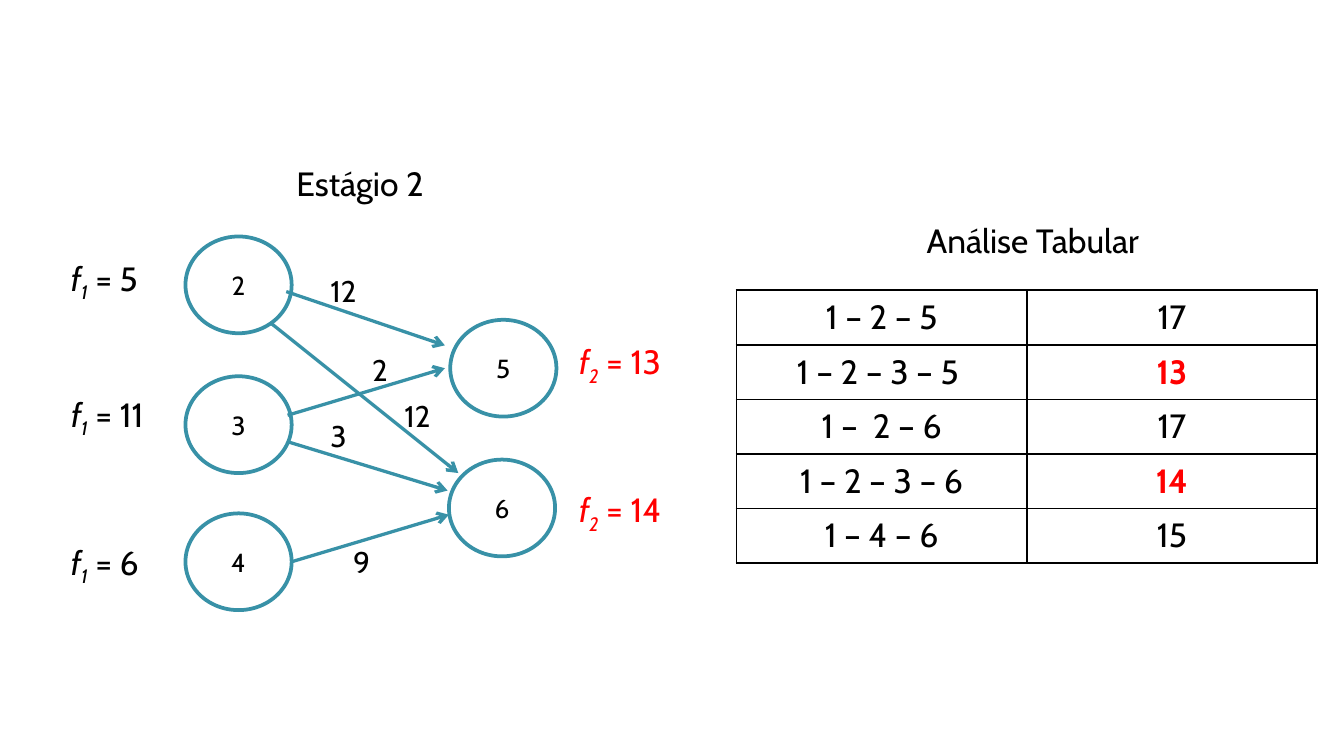
from lxml.etree import SubElement
from pptx import Presentation
from pptx.dml.color import RGBColor
from pptx.enum.shapes import MSO_CONNECTOR as CONN, MSO_SHAPE as SHAPE
from pptx.enum.text import MSO_ANCHOR as ANCHOR, PP_ALIGN as ALIGN
from pptx.oxml.ns import qn
from pptx.util import Inches, Pt

BLACK = RGBColor(0x00, 0x00, 0x00)
RED = RGBColor(0xFF, 0x00, 0x00)
TEAL = RGBColor(0x38, 0x91, 0xA7)
FONT = "Cabin"
NODE_W, NODE_H = 0.79, 0.72

NODES = [("5", 2.92, 1.22), ("6", 2.91, 2.26),
         ("2", 0.95, 0.6), ("3", 0.95, 1.64), ("4", 0.95, 2.66)]
EDGES = [(1.71, 1.93, 2.88, 1.58), (1.72, 2.13, 2.9, 2.49),
         (1.74, 3.02, 2.91, 2.67), (1.7, 1.01, 2.88, 1.41),
         (1.58, 1.24, 2.98, 2.36)]
COSTS = [("12", 1.93, 0.82, 0.54), ("2", 2.24, 1.41, 0.27),
         ("3", 1.93, 1.9, 0.27), ("9", 2.1, 2.84, 0.54),
         ("12", 2.48, 1.75, 0.54)]
VALUES = [("1", "5", 0, 0.71, 0.87, BLACK), ("1", "11", 0, 1.72, 1.02, BLACK),
          ("1", "6", 0, 2.82, 0.87, BLACK), ("2", "13", 3.78, 1.33, 1.02, RED),
          ("2", "14", 3.78, 2.43, 1.42, RED)]
ROWS = [("1 – 2 – 5", "17", False), ("1 – 2 – 3 – 5 ", "13", True),
        ("1 –  2 – 6", "17", False), ("1 – 2 – 3 – 6", "14", True),
        ("1 – 4 – 6", "15", False)]


def add_run(p, text, size, color=BLACK):
    """Append a styled run to a paragraph."""
    r = p.add_run()
    r.text = text
    r.font.name, r.font.size = FONT, Pt(size)
    r.font.color.rgb = color
    return r


def add_label(slide, x, y, w, h, text="", size=18, align=ALIGN.LEFT):
    """Add a wrapped one-line text box and return its paragraph."""
    tf = slide.shapes.add_textbox(Inches(x), Inches(y), Inches(w), Inches(h)).text_frame
    tf.word_wrap = True
    p = tf.paragraphs[0]
    p.alignment = align
    if text:
        add_run(p, text, size)
    return p


def add_value(slide, x, y, w, stage, value, color):
    """Add a stage value such as f with a subscript."""
    p = add_label(slide, x, y, w, 0.4)
    f = add_run(p, "f", 18, color)
    sub = add_run(p, stage, 18, color)
    f.font.italic = sub.font.italic = True
    sub.font._element.set("baseline", "-25000")
    add_run(p, f" = {value}", 18, color)


def add_node(slide, x, y, text):
    """Add an outlined network node."""
    s = slide.shapes.add_shape(SHAPE.OVAL, Inches(x), Inches(y),
                               Inches(NODE_W), Inches(NODE_H))
    s.shadow.inherit = False
    s.fill.background()
    s.line.color.rgb, s.line.width = TEAL, Pt(2)
    s.text_frame.vertical_anchor = ANCHOR.MIDDLE
    p = s.text_frame.paragraphs[0]
    p.alignment = ALIGN.CENTER
    add_run(p, text, 14)


def add_edge(slide, x1, y1, x2, y2):
    """Add an arrow between two nodes."""
    c = slide.shapes.add_connector(CONN.STRAIGHT, Inches(x1), Inches(y1),
                                   Inches(x2), Inches(y2))
    c.line.color.rgb, c.line.width = TEAL, Pt(1.75)
    SubElement(c.line._get_or_add_ln(), qn("a:tailEnd"), type="arrow")
    SubElement(c._element.spPr, qn("a:effectLst"))


def add_network(slide, left, top):
    """Draw the stage network from its top left corner."""
    add_label(slide, left + 1.03, top, 2.44, 0.4, "Estágio 2", align=ALIGN.CENTER)
    for text, x, y in NODES:
        add_node(slide, left + x, top + y, text)
    for x1, y1, x2, y2 in EDGES:
        add_edge(slide, left + x1, top + y1, left + x2, top + y2)
    for text, x, y, w in COSTS:
        add_label(slide, left + x, top + y, w, 0.37, text, 16)
    for stage, value, x, y, w, color in VALUES:
        add_value(slide, left + x, top + y, w, stage, value, color)


def add_borders(cell):
    """Give a cell thin black borders, placed before its fill."""
    tc_pr = cell._tc.get_or_add_tcPr()
    for i, side in enumerate(("lnL", "lnR", "lnT", "lnB")):
        ln = SubElement(tc_pr, qn(f"a:{side}"), w=str(Pt(1)))
        tc_pr.insert(i, ln)
        fill = SubElement(ln, qn("a:solidFill"))
        SubElement(fill, qn("a:srgbClr"), val=str(BLACK))


def add_analysis(slide, left, top, width, height):
    """Draw the titled table of routes and costs in the given box."""
    add_label(slide, left + 0.79, top, 2.83, 0.4, "Análise Tabular", align=ALIGN.CENTER)
    table = slide.shapes.add_table(len(ROWS), 2, Inches(left), Inches(top + 0.57),
                                   Inches(width), Inches(height - 0.57)).table
    table.first_row = table.horz_banding = False
    for i, (route, cost, best) in enumerate(ROWS):
        for j, text in enumerate((route, cost)):
            cell = table.cell(i, j)
            cell.fill.background()
            add_borders(cell)
            p = cell.text_frame.paragraphs[0]
            p.alignment = ALIGN.CENTER
            marked = best and j == 1
            add_run(p, text, 18, RED if marked else BLACK).font.bold = marked


def main():
    """Build and save the slide."""
    prs = Presentation()
    prs.slide_width = Inches(10)
    prs.slide_height = prs.slide_width * 9 // 16
    slide = prs.slides.add_slide(prs.slide_layouts[6])
    add_network(slide, 0.43, 1.16)
    add_analysis(slide, 5.48, 1.59, 4.32, 2.6)
    prs.save("out.pptx")


if __name__ == "__main__":
    main()
